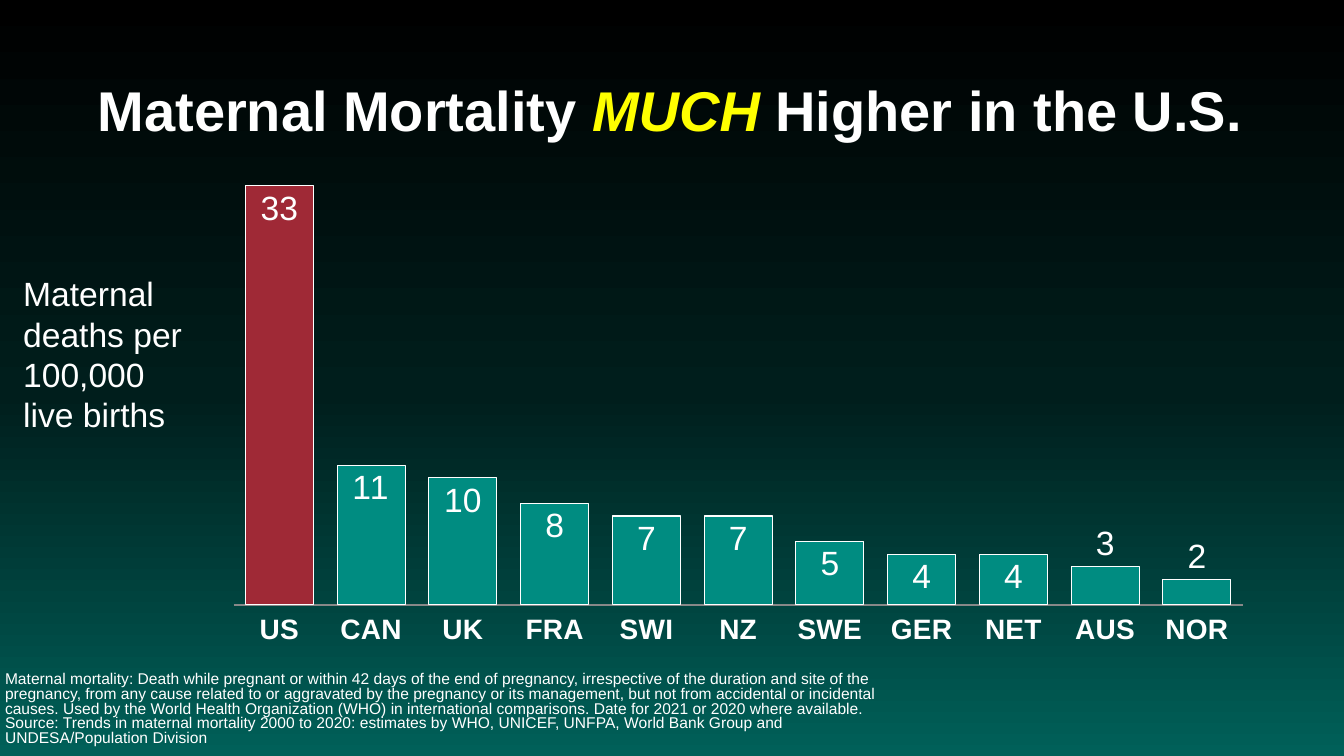
from copy import deepcopy

from pptx import Presentation
from pptx.chart.data import CategoryChartData
from pptx.dml.color import RGBColor
from pptx.enum.chart import XL_CHART_TYPE, XL_LABEL_POSITION, XL_TICK_LABEL_POSITION, XL_TICK_MARK
from pptx.enum.text import MSO_ANCHOR
from pptx.oxml import parse_xml
from pptx.oxml.ns import nsdecls
from pptx.util import Inches, Pt

COLUMN = XL_CHART_TYPE.COLUMN_CLUSTERED
INSIDE, OUTSIDE = XL_LABEL_POSITION.INSIDE_END, XL_LABEL_POSITION.OUTSIDE_END
LOW = XL_TICK_LABEL_POSITION.LOW
NO_TICK = XL_TICK_MARK.NONE
MIDDLE, TOP = MSO_ANCHOR.MIDDLE, MSO_ANCHOR.TOP

WIDE, HIGH = 13.33, 7.5
FACE = "Arial"
COLORS = {"white": "FFFFFF", "yellow": "FFFF00", "teal": "008C81",
          "red": "9F2936", "gray": "888888"}
FADE = [(0, "000000"), (0.52, "001E1C"), (1, "006059")]
PLOT = {"x": 0.025, "y": 0.064, "w": 0.974, "h": 0.825}
DEATHS = {"US": 33, "CAN": 11, "UK": 10, "FRA": 8, "SWI": 7, "NZ": 7,
          "SWE": 5, "GER": 4, "NET": 4, "AUS": 3, "NOR": 2}
SHORT = 3
NOTE = [
    "Maternal mortality: Death while pregnant or within 42 days of the end of pregnancy, "
    "irrespective of the duration and site of the pregnancy, from any cause related to or "
    "aggravated by the pregnancy or its management, but not from accidental or incidental "
    "causes. Used by the World Health Organization (WHO) in international comparisons. "
    "Date for 2021 or 2020 where available. ",
    "Source: Trends in maternal mortality 2000 to 2020: estimates by WHO, UNICEF, UNFPA, "
    "World Bank Group and UNDESA/Population Division",
]


def color(name):
    return RGBColor.from_string(COLORS[name])


def assign(item, **values):
    for key, value in values.items():
        setattr(item, key, value)


def style(font, size, tint="white", **values):
    assign(font, name=FACE, size=Pt(size), **values)
    font.color.rgb = color(tint)


def outline(line, tint, width):
    line.color.rgb = color(tint)
    line.width = Pt(width)


def place(box):
    left, top, width, height = box
    return [Inches(n) for n in (left * WIDE, top * HIGH, width * WIDE, height * HIGH)]


def text_box(slide, box, anchor, space=1.0):
    frame = slide.shapes.add_textbox(*place(box)).text_frame
    inset = Inches(0.05)
    assign(frame, word_wrap=True, vertical_anchor=anchor, margin_left=inset,
           margin_right=inset, margin_top=inset, margin_bottom=inset)
    para = frame.paragraphs[0]
    para.line_spacing = space
    return para


def add_run(para, text, size, tint="white", **values):
    run = para.add_run()
    run.text = text
    style(run.font, size, tint, **values)


def backdrop(slide):
    fill = slide.background.fill
    fill.gradient()
    fill.gradient_angle = 270
    first = fill.gradient_stops[0]
    holder = fill.gradient_stops[0].color
    holder.rgb = RGBColor.from_string(FADE[0][1])
    stops = slide.background.fill.gradient_stops
    tree = slide.element.xpath(".//p:bg//a:gsLst")[0]
    tree.insert(1, deepcopy(tree[0]))
    stops = slide.background.fill.gradient_stops
    for stop, (share, tint) in zip(stops, FADE):
        stop.position = share
        stop.color.rgb = RGBColor.from_string(tint)


def title(slide, box):
    para = text_box(slide, box, MIDDLE, 0.9)
    para.alignment = None
    add_run(para, "Maternal Mortality ", 40, bold=True)
    add_run(para, "MUCH ", 40, "yellow", bold=True, italic=True)
    add_run(para, "Higher in the U.S.", 40, bold=True)


def caption(slide, box, lines, size, anchor, space=1.0):
    para = text_box(slide, box, anchor, space)
    for index, line in enumerate(lines):
        if index:
            para.add_line_break()
        add_run(para, line, size)


def set_plot(chart):
    area = chart.element.xpath(".//c:plotArea")[0]
    for old in area.xpath("./c:layout"):
        area.remove(old)
    sides = "".join(f'<c:{key} val="{value}"/>' for key, value in PLOT.items())
    area.insert(0, parse_xml(
        f'<c:layout {nsdecls("c")}><c:manualLayout><c:layoutTarget val="inner"/>'
        f'<c:xMode val="edge"/><c:yMode val="edge"/>{sides}</c:manualLayout></c:layout>'))


def bars(slide, box):
    data = CategoryChartData(number_format="General")
    data.categories = list(DEATHS)
    data.add_series("Series 1", list(DEATHS.values()))
    chart = slide.shapes.add_chart(COLUMN, *place(box), data).chart
    assign(chart, has_legend=False, has_title=False)
    style(chart.font, 10)
    set_plot(chart)

    assign(chart.value_axis, visible=False, minimum_scale=0, maximum_scale=34,
           major_unit=10, has_major_gridlines=False)
    axis = chart.category_axis
    assign(axis, major_tick_mark=NO_TICK, minor_tick_mark=NO_TICK,
           tick_label_position=LOW, has_major_gridlines=False)
    style(axis.tick_labels.font, 20, bold=True)
    outline(axis.format.line, "gray", 1)

    plot = chart.plots[0]
    assign(plot, gap_width=35, overlap=-27, vary_by_categories=False)
    series = plot.series[0]
    series.invert_if_negative = False
    for part, tint in ((series, "teal"), (series.points[0], "red")):
        part.format.fill.solid()
        part.format.fill.fore_color.rgb = color(tint)
        outline(part.format.line, "white", 0.75)

    labels = series.data_labels
    assign(labels, show_value=True, position=INSIDE, number_format="0",
           number_format_is_linked=False)
    style(labels.font, 24)
    for index, value in enumerate(DEATHS.values()):
        if value <= SHORT:
            label = series.points[index].data_label
            style(label.font, 24)
            label.position = OUTSIDE


def main():
    deck = Presentation()
    assign(deck, slide_width=Inches(WIDE), slide_height=Inches(HIGH))
    slide = deck.slides.add_slide(deck.slide_layouts[6])
    backdrop(slide)
    title(slide, (0.069, 0.053, 0.863, 0.193))
    caption(slide, (0, 0.877, 0.675, 0.123), NOTE, 11.1, MIDDLE, 0.8)
    caption(slide, (0.0135, 0.355, 0.135, 0.229),
            ["Maternal deaths per 100,000 ", "live births"], 24, TOP)
    bars(slide, (0.1545, 0.185, 0.771, 0.692))
    deck.save("out.pptx")


if __name__ == "__main__":
    main()
